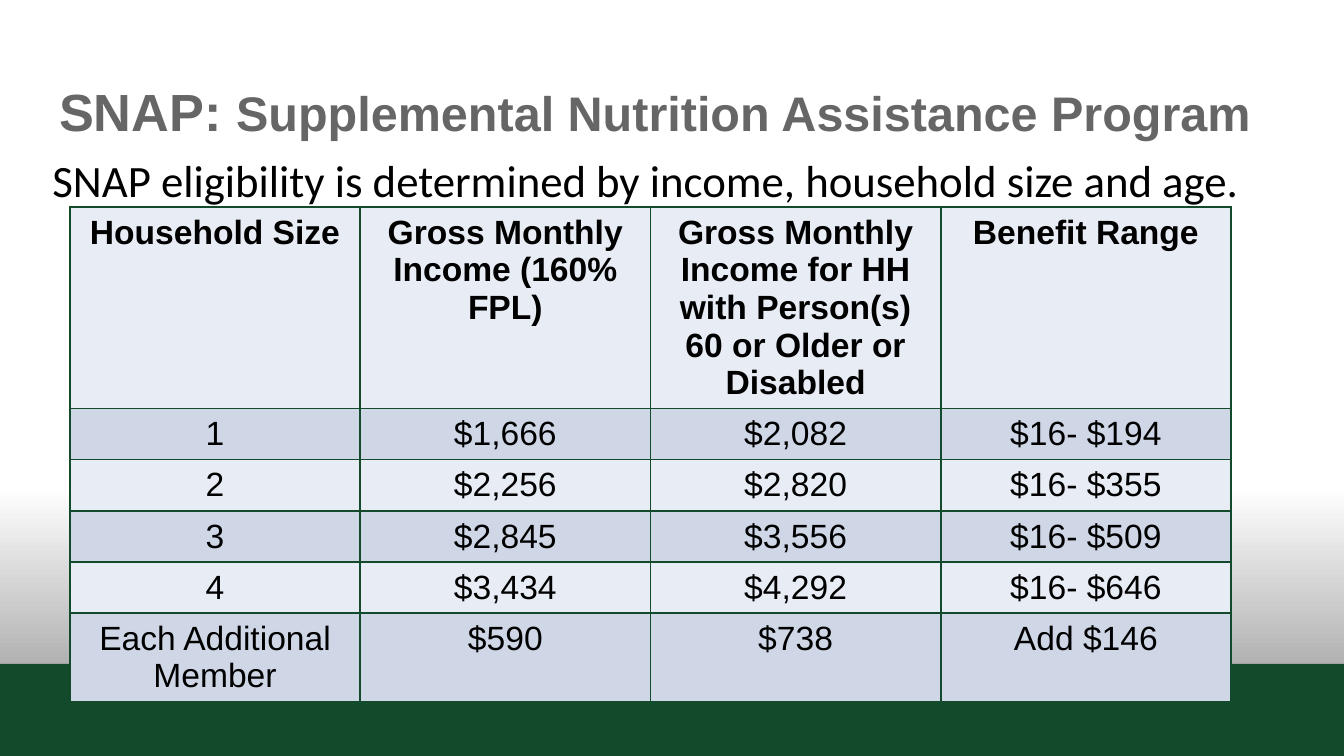
from lxml import etree
from pptx import Presentation
from pptx.dml.color import RGBColor
from pptx.enum.shapes import MSO_SHAPE
from pptx.enum.text import MSO_ANCHOR, MSO_AUTO_SIZE, PP_ALIGN
from pptx.oxml.ns import qn
from pptx.util import Inches, Pt

RECTANGLE = MSO_SHAPE.RECTANGLE
LEFT, CENTER = PP_ALIGN.LEFT, PP_ALIGN.CENTER
MIDDLE, BOTTOM = MSO_ANCHOR.MIDDLE, MSO_ANCHOR.BOTTOM
NO_AUTOFIT = MSO_AUTO_SIZE.NONE
GREEN, GRAY, BLACK, WHITE = "134A2B", "666666", "000000", "FFFFFF"
FADE, PALE, DARKER = "A5A5A5", "E8ECF4", "CFD7E7"

ROWS = [
    ["Household Size", "Gross Monthly Income (160% FPL)",
     "Gross Monthly Income for HH with Person(s) 60 or Older or Disabled", "Benefit Range"],
    ["1", "$1,666", "$2,082", "$16- $194"],
    ["2", "$2,256", "$2,820", "$16- $355"],
    ["3", "$2,845", "$3,556", "$16- $509"],
    ["4", "$3,434", "$4,292", "$16- $646"],
    ["Each Additional Member", "$590", "$738", "Add $146"],
]
ROW_HEIGHTS = [1.2, 0.3, 0.3, 0.3, 0.3, 0.52]
COLUMN_WIDTH = 2.16


def color(value):
    return RGBColor.from_string(value)


class SlideBuilder:
    """Holds the slide's style and adds each kind of element to it."""

    def __init__(self, page):
        self.page = page

    def font(self, para, size, name="Arial", ink=BLACK, bold=False, align=LEFT):
        para.alignment = align
        para.font.size = Pt(size)
        para.font.name = name
        para.font.bold = bold
        para.font.color.rgb = color(ink)

    def rectangle(self, left, top, width, height, fill=WHITE):
        box = self.page.shapes.add_shape(
            RECTANGLE, Inches(left), Inches(top), Inches(width), Inches(height))
        box.shadow.inherit = False
        box.line.fill.background()
        box.fill.solid()
        box.fill.fore_color.rgb = color(fill)
        return box

    def fade(self, left, top, width, height, bottom, upper):
        fill = self.rectangle(left, top, width, height).fill
        fill.gradient()
        fill.gradient_angle = 90
        for stop, position, value in zip(fill.gradient_stops, (0, 1), (bottom, upper)):
            stop.position = position
            stop.color.rgb = color(value)

    def title(self, left, top, width, height, spans):
        box = self.page.shapes.title
        box.left, box.top = Inches(left), Inches(top)
        box.width, box.height = Inches(width), Inches(height)
        frame = box.text_frame
        frame.auto_size, frame.word_wrap = NO_AUTOFIT, True
        frame.vertical_anchor = BOTTOM
        frame.margin_left = frame.margin_right = frame.margin_top = Inches(0.1)
        frame.margin_bottom = Inches(0.06)
        para = frame.paragraphs[0]
        self.font(para, spans[0][1], ink=GRAY, bold=True)
        for text, size in spans:
            span = para.add_run()
            span.text = text
            span.font.size = Pt(size)

    def statement(self, left, top, width, height, text):
        frame = self.rectangle(left, top, width, height).text_frame
        frame.word_wrap = True
        frame.vertical_anchor = MIDDLE
        frame.margin_left = frame.margin_right = 0
        frame.margin_top = frame.margin_bottom = 0
        frame.text = text
        self.font(frame.paragraphs[0], 24, "Calibri")

    def borders(self, cell):
        properties = cell._tc.get_or_add_tcPr()
        for side in ("lnL", "lnR", "lnT", "lnB"):
            line = etree.SubElement(properties, qn(f"a:{side}"), w=str(Pt(1)))
            fill = etree.SubElement(line, qn("a:solidFill"))
            etree.SubElement(fill, qn("a:srgbClr"), val=GREEN)

    def table(self, left, top, rows, heights, column_width):
        columns = len(rows[0])
        table = self.page.shapes.add_table(
            len(rows), columns, Inches(left), Inches(top),
            Inches(column_width * columns), Inches(sum(heights))).table
        for column in table.columns:
            column.width = Inches(column_width)
        for index, (texts, height) in enumerate(zip(rows, heights)):
            table.rows[index].height = Inches(height)
            for cell, text in zip(table.rows[index].cells, texts):
                self.borders(cell)
                cell.fill.solid()
                cell.fill.fore_color.rgb = color(DARKER if index % 2 else PALE)
                cell.text = text
                self.font(cell.text_frame.paragraphs[0], 18, bold=index == 0, align=CENTER)


def main():
    deck = Presentation()
    deck.slide_width = Inches(10)
    deck.slide_height = deck.slide_width * 9 // 16
    builder = SlideBuilder(deck.slides.add_slide(deck.slide_layouts[5]))
    builder.fade(0, 3.62, 10, 1.54, FADE, WHITE)
    builder.rectangle(0, 4.94, 10, 0.69, GREEN)
    builder.title(0.34, 0.49, 9.32, 0.63,
                  [("SNAP: ", 28), ("Supplemental Nutrition Assistance Program", 26)])
    builder.statement(0.39, 1.14, 9, 0.4,
                      "SNAP eligibility is determined by income, household size and age.")
    builder.table(0.52, 1.54, ROWS, ROW_HEIGHTS, COLUMN_WIDTH)
    deck.save("out.pptx")


if __name__ == "__main__":
    main()
